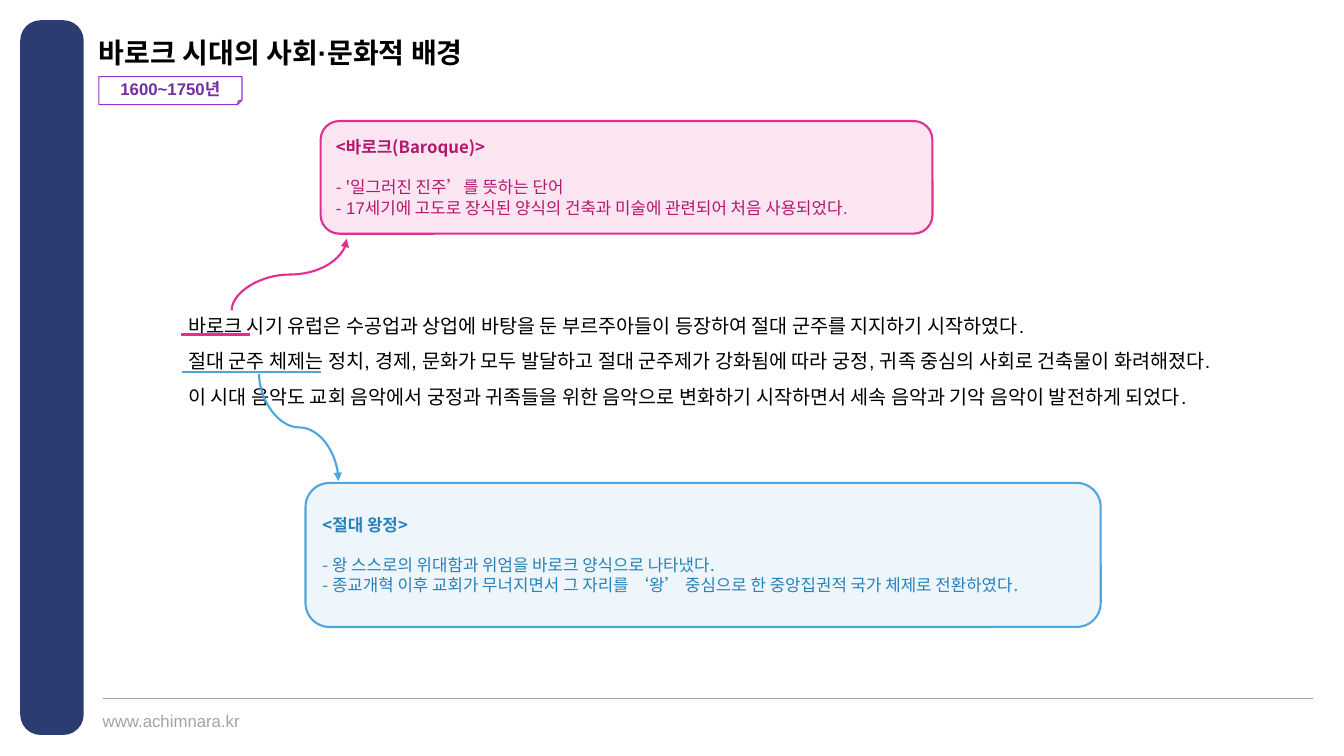
import pptx
import pptx.util
import pptx.dml.color
import pptx.enum.shapes
import pptx.enum.text
import pptx.oxml.ns
import lxml.etree

Cm, Pt = pptx.util.Cm, pptx.util.Pt
KIND = pptx.enum.shapes.MSO_SHAPE
LINK = pptx.enum.shapes.MSO_CONNECTOR
ALIGN = pptx.enum.text.PP_ALIGN
MID = pptx.enum.text.MSO_ANCHOR.MIDDLE
qn = pptx.oxml.ns.qn

SANS, KOREAN = "Arial", "Noto Sans CJK KR"
HUES = {
    "navy": "2B3C71", "gray": "9EA4AA", "black": "000000", "white": "FFFFFF",
    "pink": "E32D91", "rose": "FBE5F1", "wine": "B4186E",
    "sky": "4EA6DC", "ice": "EEF6FC", "blue": "2582BB",
    "violet": "9832D6", "purple": "7030A0",
}


def hue(name):
    return pptx.dml.color.RGBColor.from_string(HUES[name])


def style(para, text, size, color, bold=False, face=SANS, space=None):
    para.text = text
    font = para.font
    font.name, font.size, font.bold = face, Pt(size), bold
    font.color.rgb = hue(color)
    if space:
        para.line_spacing = space


def add_text(slide, box, lines, size, color, bold=False, space=None, inset=None):
    frame = slide.shapes.add_textbox(*map(Cm, box)).text_frame
    frame.word_wrap = True
    if inset is not None:
        frame.margin_left = frame.margin_right = Cm(inset)
        frame.margin_top = frame.margin_bottom = Cm(inset)
    for i, line in enumerate(lines):
        para = frame.add_paragraph() if i else frame.paragraphs[0]
        style(para, line, size, color, bold, space=space)


def add_panel(slide, kind, box, fill, edge=None, width=1.5):
    panel = slide.shapes.add_shape(kind, *map(Cm, box))
    panel.shadow.inherit = False
    panel.fill.solid()
    panel.fill.fore_color.rgb = hue(fill)
    if edge:
        panel.line.color.rgb = hue(edge)
        panel.line.width = Pt(width)
    else:
        panel.line.fill.background()
    panel.text_frame.word_wrap = True
    panel.text_frame.vertical_anchor = MID
    return panel


def add_note(slide, box, fill, edge, color, head, items):
    """Rounded box with a bold heading and (text, font) items."""
    frame = add_panel(slide, KIND.ROUNDED_RECTANGLE, box, fill, edge).text_frame
    style(frame.paragraphs[0], head, 12, color, True, KOREAN)
    frame.paragraphs[0].alignment = ALIGN.LEFT
    for i, (text, face) in enumerate(items):
        para = frame.add_paragraph()
        para.alignment = ALIGN.LEFT
        style(para, text, 12, color, face=face)
        if i == 0:
            para.line_spacing = 1.5
            para.space_before = Pt(7)


def add_line(slide, x1, y1, x2, y2, color, width=1.5, kind=LINK.STRAIGHT):
    line = slide.shapes.add_connector(kind, Cm(x1), Cm(y1), Cm(x2), Cm(y2))
    line.line.color.rgb = hue(color)
    line.line.width = Pt(width)
    lxml.etree.SubElement(line._element.spPr, qn("a:effectLst"))
    return line


def add_curve(slide, x1, y1, x2, y2, color):
    """Curved arrow that leaves and arrives upright: a turned connector."""
    midx, midy = (x1 + x2) / 2, (y1 + y2) / 2
    dx, dy = abs(y2 - y1) / 2, abs(x2 - x1) / 2
    up = y2 < y1
    if not up:
        dy = -dy
    curve = add_line(slide, midx + dx, midy + dy, midx - dx, midy - dy,
                     color, kind=LINK.CURVE)
    turn = 90 if up else 270
    curve._element.spPr.find(qn("a:xfrm")).set("rot", str(turn * 60000))
    stroke = curve._element.spPr.find(qn("a:ln"))
    lxml.etree.SubElement(stroke, qn("a:tailEnd"), type="triangle")


def main():
    deck = pptx.Presentation()
    deck.slide_width, deck.slide_height = Cm(33.87), Cm(19.05)
    slide = deck.slides.add_slide(deck.slide_layouts[6])

    # Side bar and footer
    bar = add_panel(slide, KIND.ROUNDED_RECTANGLE, (0.51, 0.51, 1.6, 18.01), "navy")
    bar.adjustments[0] = 0.32
    add_line(slide, 33.1, 17.6, 2.59, 17.6, "gray", 0.5)
    add_text(slide, (2.59, 17.91, 3.81, 0.51), ["www.achimnara.kr"],
             12, "gray", inset=0)

    # Title and period tag
    add_text(slide, (2.49, 0.99, 19.99, 0.71), ["바로크 시대의 사회·문화적 배경"],
             20, "black", True, 0.9, 0)
    tag = add_panel(slide, KIND.FOLDED_CORNER, (2.49, 1.93, 3.61, 0.71),
                    "white", "violet", 0.75)
    era = tag.text_frame.paragraphs[0]
    era.alignment = ALIGN.CENTER
    style(era, "1600~1750년", 12, "purple", True)

    # Main text
    add_text(slide, (4.5, 7.49, 26.47, 3.73), [
        "바로크 시기 유럽은 수공업과 상업에 바탕을 둔 부르주아들이 등장하여 "
        "절대 군주를 지지하기 시작하였다.",
        "절대 군주 체제는 정치, 경제, 문화가 모두 발달하고 절대 군주제가 강화됨에 따라 "
        "궁정, 귀족 중심의 사회로 건축물이 화려해졌다. 이 시대 음악도 교회 음악에서 "
        "궁정과 귀족들을 위한 음악으로 변화하기 시작하면서 세속 음악과 기악 음악이 "
        "발전하게 되었다.",
    ], 14, "black", space=1.5)

    # Baroque: underline, note, arrow
    add_line(slide, 4.57, 8.43, 6.3, 8.43, "pink")
    add_note(slide, (8.08, 3.05, 15.42, 2.84), "rose", "pink", "wine",
             "<바로크(Baroque)>", [
                 ("- '일그러진 진주’를 뜻하는 단어", KOREAN),
                 ("- 17세기에 고도로 장식된 양식의 건축과 미술에 관련되어 "
                  "처음 사용되었다.", SANS)])
    add_curve(slide, 5.84, 7.82, 8.74, 6.02, "pink")

    # Absolute monarchy: underline, arrow, note
    add_line(slide, 4.6, 9.37, 8.08, 9.37, "sky")
    add_curve(slide, 6.53, 9.42, 8.53, 12.12, "sky")
    add_note(slide, (7.7, 12.17, 20.04, 3.63), "ice", "sky", "blue",
             "<절대 왕정>", [
                 ("- 왕 스스로의 위대함과 위엄을 바로크 양식으로 나타냈다.", KOREAN),
                 ("- 종교개혁 이후 교회가 무너지면서 그 자리를 ‘왕’ 중심으로 한 "
                  "중앙집권적 국가 체제로 전환하였다.", KOREAN)])

    deck.save("out.pptx")


if __name__ == "__main__":
    main()
